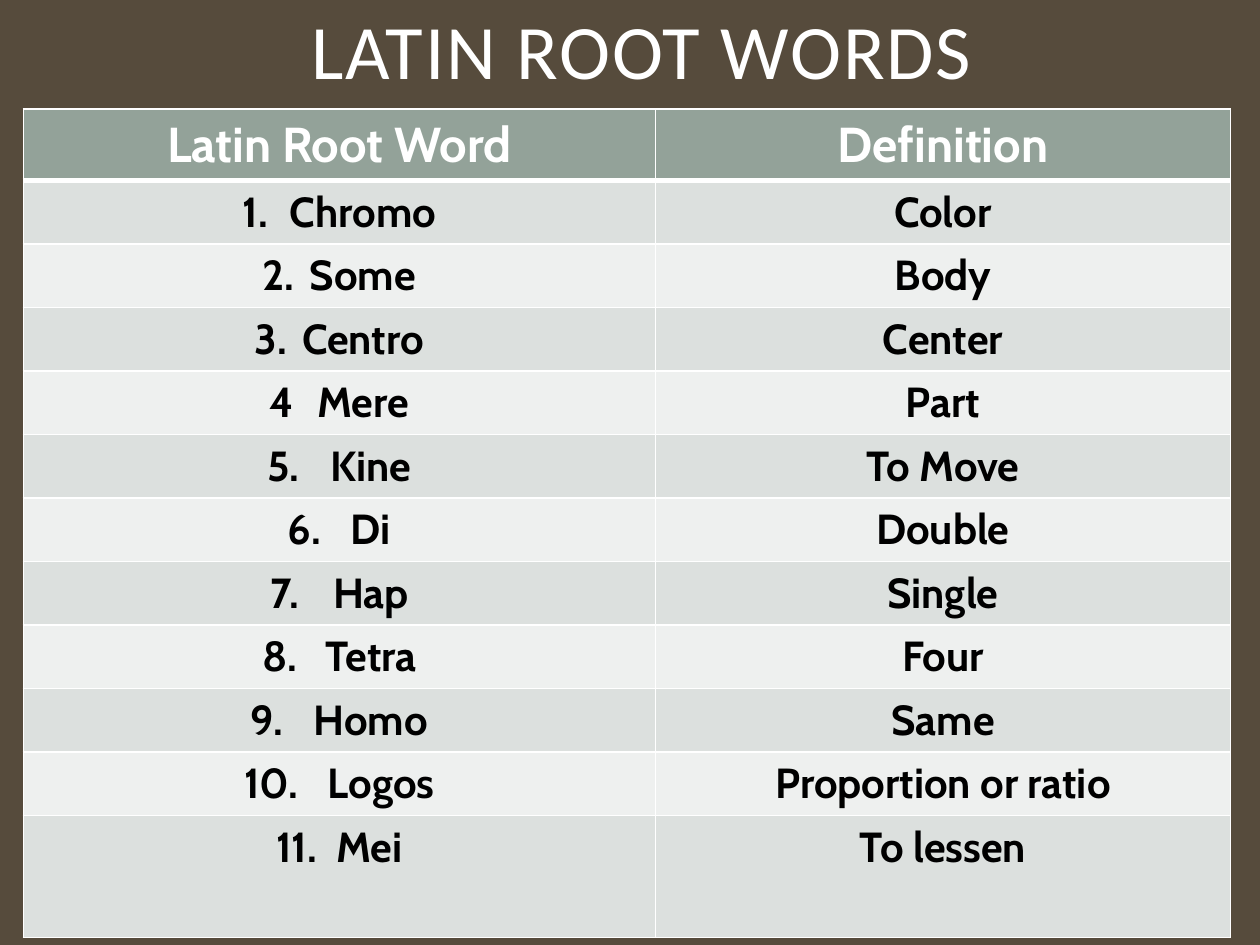
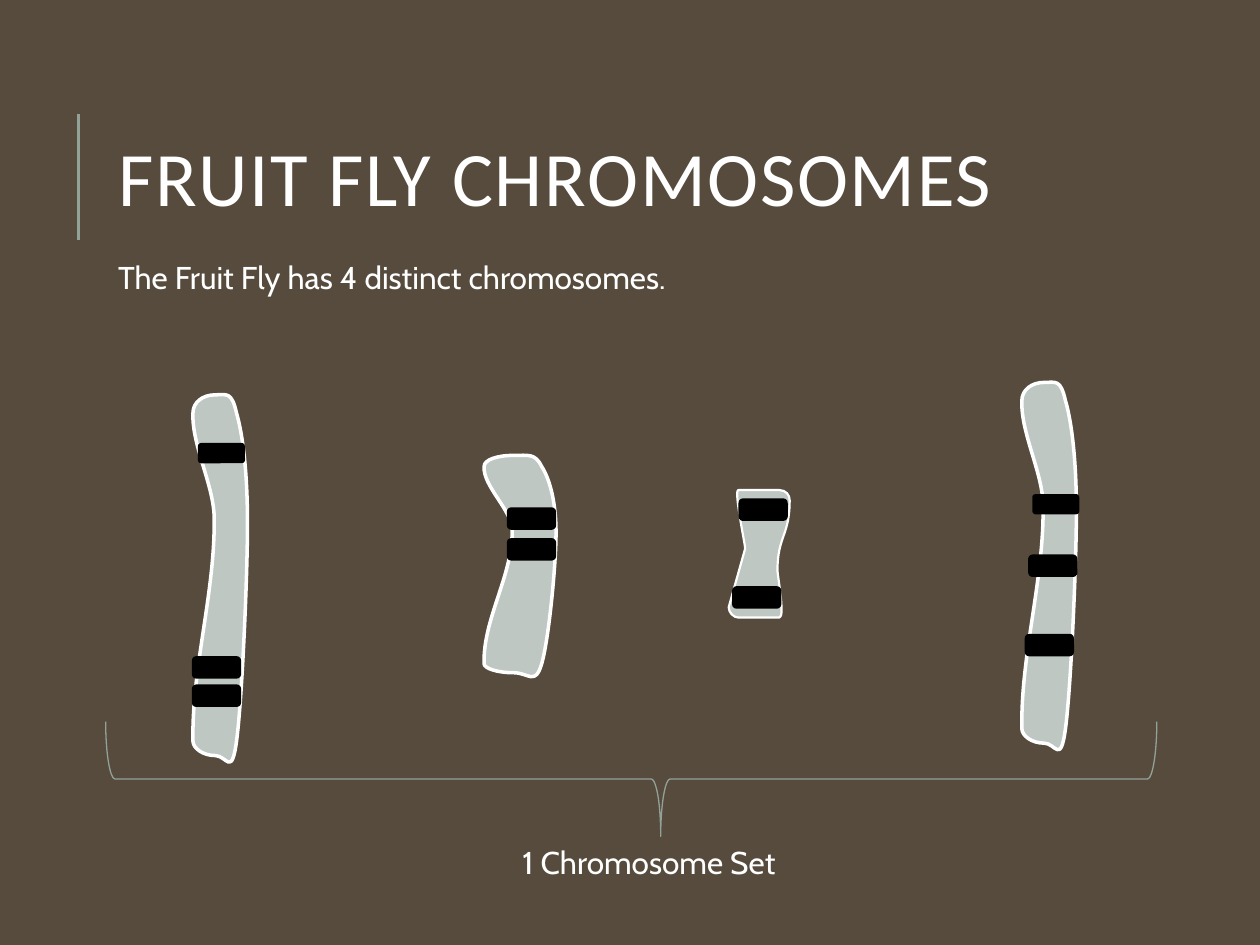
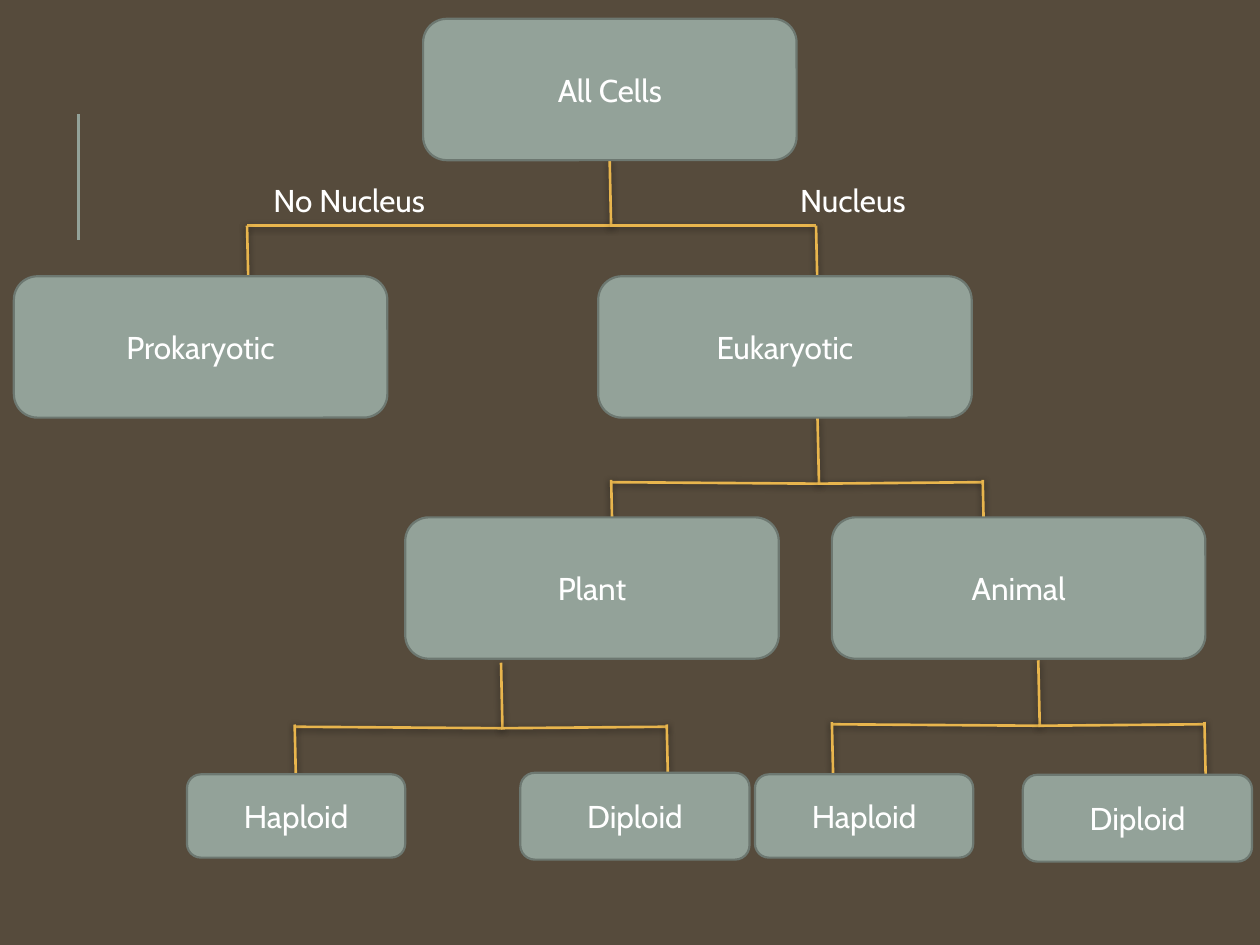
"""Build a biology deck: Latin roots, fruit fly chromosomes and a cell tree."""
from lxml import etree
from pptx import Presentation
from pptx.dml.color import RGBColor
from pptx.enum.shapes import MSO_CONNECTOR, MSO_SHAPE
from pptx.enum.text import MSO_ANCHOR, PP_ALIGN
from pptx.oxml.ns import qn
from pptx.util import Cm, Pt

STRAIGHT = MSO_CONNECTOR.STRAIGHT
ROUNDED, BRACE = MSO_SHAPE.ROUNDED_RECTANGLE, MSO_SHAPE.RIGHT_BRACE
TOP, MIDDLE = MSO_ANCHOR.TOP, MSO_ANCHOR.MIDDLE
LEFT, CENTER = PP_ALIGN.LEFT, PP_ALIGN.CENTER

COLOURS = {
    "brown": "564B3C", "sage": "93A299", "sage_edge": "6D7871",
    "chromosome": "BEC7C2", "gold": "E8B54D", "white": "FFFFFF",
    "black": "000000", "row_dark": "DCE0DE", "row_light": "EEF0EF",
}
TITLE = {"name": "Calibri", "size": Pt(44)}
BODY = {"name": "Cabin", "size": Pt(18)}
HEADER = {"name": "Cabin", "size": Pt(28), "bold": True}
ENTRY = {"name": "Cabin", "size": Pt(24), "bold": True}

NARROW, WIDE = Cm(0.95), Cm(1.27)
ROOTS = [
    ([("Chromo", 0)], "Color", "arabicPeriod", NARROW),
    ([("Some", 0)], "Body", "arabicPeriod", NARROW),
    ([("Centro", 0)], "Center", "arabicPeriod", NARROW),
    ([("Mere", 0)], "Part", "arabicPlain", NARROW),
    ([("Kine", 0)], "To Move", "arabicPeriod", WIDE),
    ([("Di", 0)], "Double", "arabicPeriod", WIDE),
    ([("Hap", 0)], "Single", "arabicPeriod", WIDE),
    ([("Tetra", 0)], "Four", "arabicPeriod", WIDE),
    ([("Homo", 0)], "Same", "arabicPeriod", WIDE),
    ([("10.", 0), (" ", 11.4), ("Logos", 0)], "Proportion or ratio", None, None),
    ([("11.", 0), (" ", 5.7), ("Mei", 0)], "To lessen", None, None),
]

BENT_OUTLINE = [
    [(0, 0.05)],
    [(0, 0.02), (0.18, 0), (0.41, 0)],
    [(0.62, 0), (0.71, -0.01), (0.8, 0.05)],
    [(0.9, 0.1), (1, 0.2), (1, 0.35)],
    [(1, 0.49), (0.9, 0.83), (0.8, 0.94)],
    [(0.71, 1.04), (0.62, 0.98), (0.41, 0.98)],
    [(0.18, 0.98), (0, 0.96), (0, 0.94)],
    [(-0.02, 0.74), (0.4, 0.54), (0.39, 0.34)],
    [(0.4, 0.25), (-0.02, 0.14), (0, 0.05)],
]
WAISTED_OUTLINE = [
    [(0.27, 0.46)],
    [(0.27, 0.42), (0.08, 0), (0.16, 0)],
    [(0.83, 0)],
    [(0.94, 0), (1, 0.04), (1, 0.08)],
    [(1, 0.36), (0.8, 0.36), (0.8, 0.63)],
    [(0.8, 0.67), (0.93, 1), (0.83, 1)],
    [(0.16, 1)],
    [(0.08, 1), (0, 0.96), (0, 0.92)],
    [(0.27, 0.46)],
]
CHROMOSOMES = [
    (BENT_OUTLINE, (3.89, 7.96, 1.1, 7.42), 2),
    (BENT_OUTLINE, (9.76, 9.18, 1.45, 4.47), 2),
    (BENT_OUTLINE, (20.6, 7.71, 1.1, 7.42), 2),
    (WAISTED_OUTLINE, (14.69, 9.88, 1.23, 2.57), 1.25),
]
EDGED_BANDS = [
    (3.89, 13.82), (3.89, 13.25), (10.24, 10.25), (10.24, 10.87),
    (20.68, 12.8), (20.75, 11.2), (14.78, 11.84), (14.91, 10.07),
]
PLAIN_BANDS = [(3.99, 8.93), (20.81, 9.96)]

FORKS = [
    (12.29, 3.23, 4.98, 16.45, 0), (16.48, 8.43, 12.32, 19.81, 0.03),
    (10.1, 13.36, 5.94, 13.44, 0.03), (20.93, 13.31, 16.77, 24.28, 0.03),
]
GROUP, HAPLOID, DIPLOID = (7.53, 2.85), (4.4, 1.68), (4.62, 1.75)
CELLS = [
    ("All Cells", (8.53, 0.38), GROUP),
    ("Prokaryotic", (0.28, 5.57), GROUP),
    ("Eukaryotic", (12.06, 5.57), GROUP),
    ("Plant", (8.17, 10.43), GROUP),
    ("Animal", (16.77, 10.43), GROUP),
    ("Haploid", (3.77, 15.61), HAPLOID),
    ("Diploid", (10.49, 15.58), DIPLOID),
    ("Haploid", (15.22, 15.61), HAPLOID),
    ("Diploid", (20.62, 15.62), DIPLOID),
]


def colour(name):
    """Return the named colour."""
    return RGBColor.from_string(COLOURS[name])


def lengths(values):
    """Turn centimetre numbers into lengths."""
    return [Cm(value) for value in values]


def add_node(parent, tag, **attributes):
    """Append an XML child with the given attributes."""
    node = etree.SubElement(parent, qn(tag))
    for name, value in attributes.items():
        node.set(name, str(value))
    return node


def new_page(deck):
    """Add a blank page with the shared background and side rule."""
    page = deck.slides.add_slide(deck.slide_layouts[6])
    page.background.fill.solid()
    page.background.fill.fore_color.rgb = colour("brown")
    add_line(page, (1.58, 4.83), (1.58, 2.29), "sage")
    return page


def write(frame, parts, style, ink="white", align=LEFT, anchor=TOP):
    """Write one paragraph from pairs of text and letter spacing."""
    for name, value in {"word_wrap": True, "vertical_anchor": anchor}.items():
        setattr(frame, name, value)
    para = frame.paragraphs[0]
    para.alignment = align
    for text, spacing in parts:
        span = para.add_run()
        span.text = text
        for name, value in style.items():
            setattr(span.font, name, value)
        span.font.color.rgb = colour(ink)
        if spacing:
            span.font._element.set("spc", str(round(spacing * 100)))
    return para


def add_text(page, text, place):
    """Add a body text box."""
    box = page.shapes.add_textbox(*lengths(place))
    write(box.text_frame, [(text, 0)], BODY)


def add_title(page, text, left, top, align=LEFT):
    """Add a spaced title."""
    box = page.shapes.add_textbox(*lengths((left, top, 20.24, 4.17)))
    para = write(box.text_frame, [(text, 1)], TITLE, align=align, anchor=MIDDLE)
    para.line_spacing = 0.8


def paint(shape, fill, edge, weight=1.25):
    """Set fill and outline, where None leaves either out."""
    shape.shadow.inherit = False
    if fill:
        shape.fill.solid()
        shape.fill.fore_color.rgb = colour(fill)
    else:
        shape.fill.background()
    if edge:
        shape.line.color.rgb = colour(edge)
        shape.line.width = Pt(weight)
    else:
        shape.line.fill.background()


def add_line(page, start, end, ink, shadow=False):
    """Add a straight line, with a soft shadow if asked."""
    line = page.shapes.add_connector(STRAIGHT, *lengths(start + end))
    line.line.color.rgb = colour(ink)
    line.line.width = Pt(1.5)
    effects = add_node(line._element.spPr, "a:effectLst")
    if shadow:
        cast = add_node(effects, "a:outerShdw", blurRad=Pt(4), dist=Pt(1),
                        dir=5400000, rotWithShape=0)
        tint = add_node(cast, "a:srgbClr", val=COLOURS["black"])
        add_node(tint, "a:alpha", val=50000)


def add_borders(cell, top, bottom):
    """Draw white cell borders with the given top and bottom weights."""
    properties = cell._tc.get_or_add_tcPr()
    sides = {"a:lnL": 1, "a:lnR": 1, "a:lnT": top, "a:lnB": bottom}
    for tag, weight in sides.items():
        border = add_node(properties, tag, w=Pt(weight))
        add_node(add_node(border, "a:solidFill"), "a:srgbClr",
                 val=COLOURS["white"])


def add_number(para, scheme, start, indent):
    """Number a paragraph with a hanging indent."""
    properties = para._p.get_or_add_pPr()
    properties.set("marL", str(indent))
    properties.set("indent", str(-indent))
    add_node(properties, "a:buFont", typeface="+mj-lt")
    add_node(properties, "a:buAutoNum", type=scheme, startAt=start)


def add_root_table(page):
    """Add the table of Latin roots and definitions."""
    rows = [([("Latin Root Word", 0)], "Definition", None, None)] + ROOTS
    table = page.shapes.add_table(
        len(rows), 2, *lengths((0.47, 2.2, 24.34, 16.61))).table
    for column, width in zip(table.columns, lengths((12.74, 11.6))):
        column.width = width
    heights = [1.44] + [1.28] * (len(rows) - 2) + [2.46]
    for row, height in zip(table.rows, lengths(heights)):
        row.height = height
    for index, (word, definition, scheme, indent) in enumerate(rows):
        header = index == 0
        fill = "sage" if header else ("row_light", "row_dark")[index % 2]
        for column, parts in enumerate((word, [(definition, 0)])):
            cell = table.cell(index, column)
            add_borders(cell, 3 if index == 1 else 1, 3 if header else 1)
            cell.fill.solid()
            cell.fill.fore_color.rgb = colour(fill)
            para = write(cell.text_frame, parts, HEADER if header else ENTRY,
                         "white" if header else "black", CENTER)
            if scheme and column == 0:
                add_number(para, scheme, index, indent)


def add_chromosome(page, outline, place, weight):
    """Add a chromosome by fitting a unit outline to a place."""
    left, top, width, height = place
    fitted = [[tuple(lengths((left + x * width, top + y * height)))
               for x, y in segment] for segment in outline]
    builder = page.shapes.build_freeform(*fitted[0][0])
    builder.add_line_segments([segment[-1] for segment in fitted[1:]])
    shape = builder.convert_to_shape()
    steps = list(shape._element.iter(qn("a:lnTo")))
    for step, segment in zip(steps, fitted[1:]):
        if len(segment) == 3:
            bend(step, segment, shape.left, shape.top)
    paint(shape, "chromosome", "white", weight)


def bend(step, segment, left, top):
    """Replace a straight outline step by a cubic curve."""
    curve = etree.Element(qn("a:cubicBezTo"))
    for x, y in segment:
        add_node(curve, "a:pt", x=x - left, y=y - top)
    step.getparent().replace(step, curve)


def add_band(page, left, top, edge):
    """Add a black band across a chromosome."""
    band = page.shapes.add_shape(ROUNDED, *lengths((left, top, 0.95, 0.41)))
    paint(band, "black", edge)


def add_brace(page):
    """Add the brace that gathers the chromosome set."""
    brace = page.shapes.add_shape(BRACE, *lengths((11.57, 5.11, 2.31, 21.19)))
    brace.rotation = 90
    brace.adjustments[0], brace.adjustments[1] = 0.083, 0.472
    paint(brace, None, "sage", 0.75)


def add_fork(page, stem, top, left, right, lift):
    """Add a stem, a bar in two halves with lifted ends and two drops."""
    tilt, drop = 0.03, 1.32
    bar = top + drop
    start = bar - 2.5 * lift
    strokes = [
        ((stem, top), (stem + tilt, bar)),
        ((stem + tilt, bar), (left, bar - lift)),
        ((right, bar - lift), (stem, bar)),
    ]
    strokes += [((x, start), (x + tilt, start + drop)) for x in (left, right)]
    for begin, end in strokes:
        add_line(page, begin, end, "gold", shadow=True)


def add_cell_box(page, text, corner, size):
    """Add a labelled box of the cell tree."""
    box = page.shapes.add_shape(ROUNDED, *lengths(corner + size))
    paint(box, "sage", "sage_edge")
    write(box.text_frame, [(text, 0)], BODY, align=CENTER, anchor=MIDDLE)


def build_roots(deck):
    """Build the Latin root page."""
    page = new_page(deck)
    add_title(page, "LATIN ROOT WORDS", 2.82, -0.93, CENTER)
    add_root_table(page)


def build_chromosomes(deck):
    """Build the fruit fly page."""
    page = new_page(deck)
    add_title(page, "FRUIT FLY CHROMOSOMES", 2.13, 1.63)
    for outline, place, weight in CHROMOSOMES:
        add_chromosome(page, outline, place, weight)
    for bands, edge in ((EDGED_BANDS, "black"), (PLAIN_BANDS, None)):
        for left, top in bands:
            add_band(page, left, top, edge)
    add_text(page, "The Fruit Fly has 4 distinct chromosomes.",
             (2.13, 5.08, 18.31, 1.02))
    add_brace(page)
    add_text(page, "1 Chromosome Set", (10.28, 16.86, 9.27, 1.02))


def build_cell_tree(deck):
    """Build the cell tree page."""
    page = new_page(deck)
    for fork in FORKS:
        add_fork(page, *fork)
    for text, left in (("No Nucleus", 5.26), ("Nucleus", 15.88)):
        add_text(page, text, (left, 3.53, 5.84, 1.02))
    for text, corner, size in CELLS:
        add_cell_box(page, text, corner, size)


def main():
    """Build and save the deck."""
    deck = Presentation()
    deck.slide_width, deck.slide_height = lengths((25.4, 19.05))
    build_roots(deck)
    build_chromosomes(deck)
    build_cell_tree(deck)
    deck.save("out.pptx")


if __name__ == "__main__":
    main()
